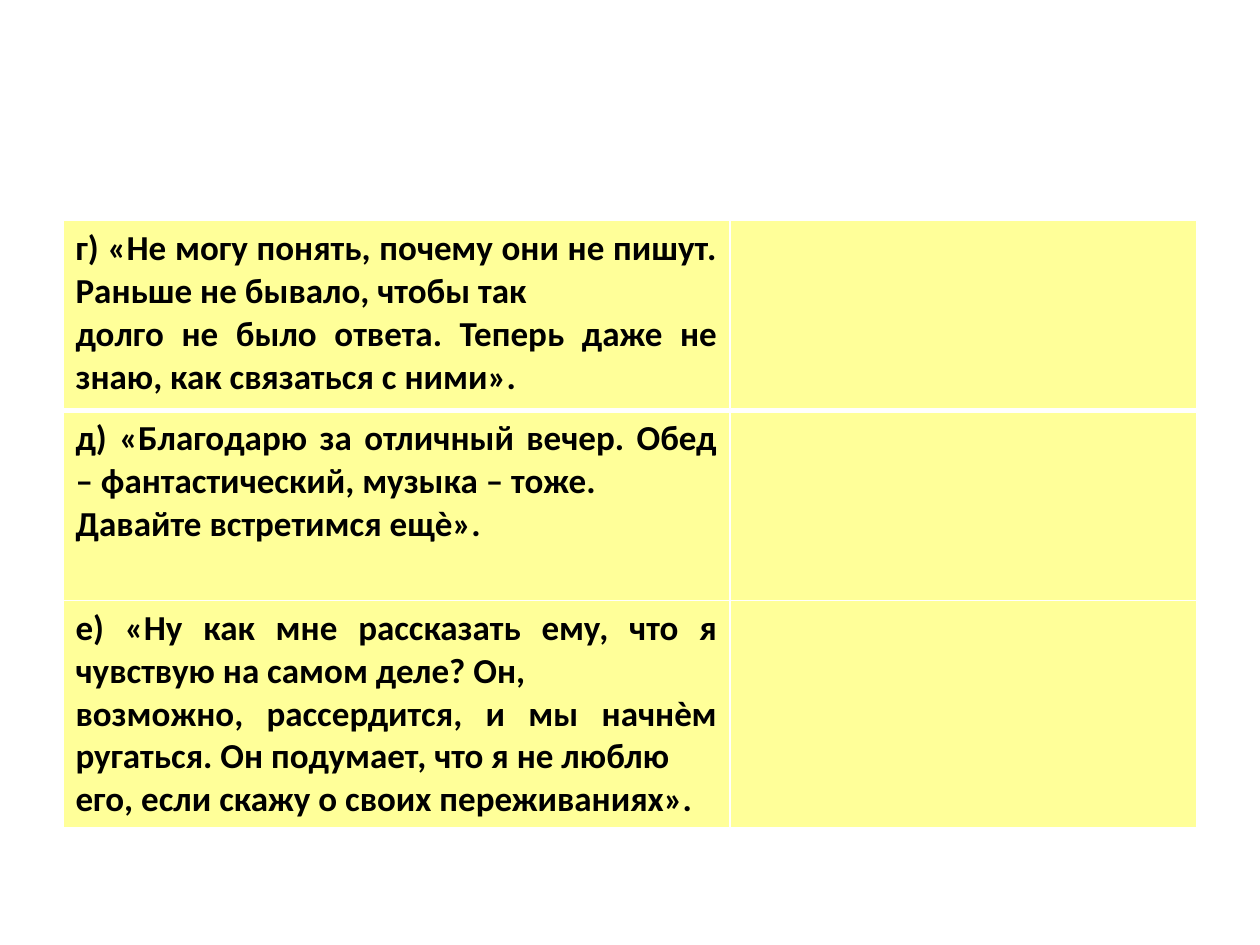
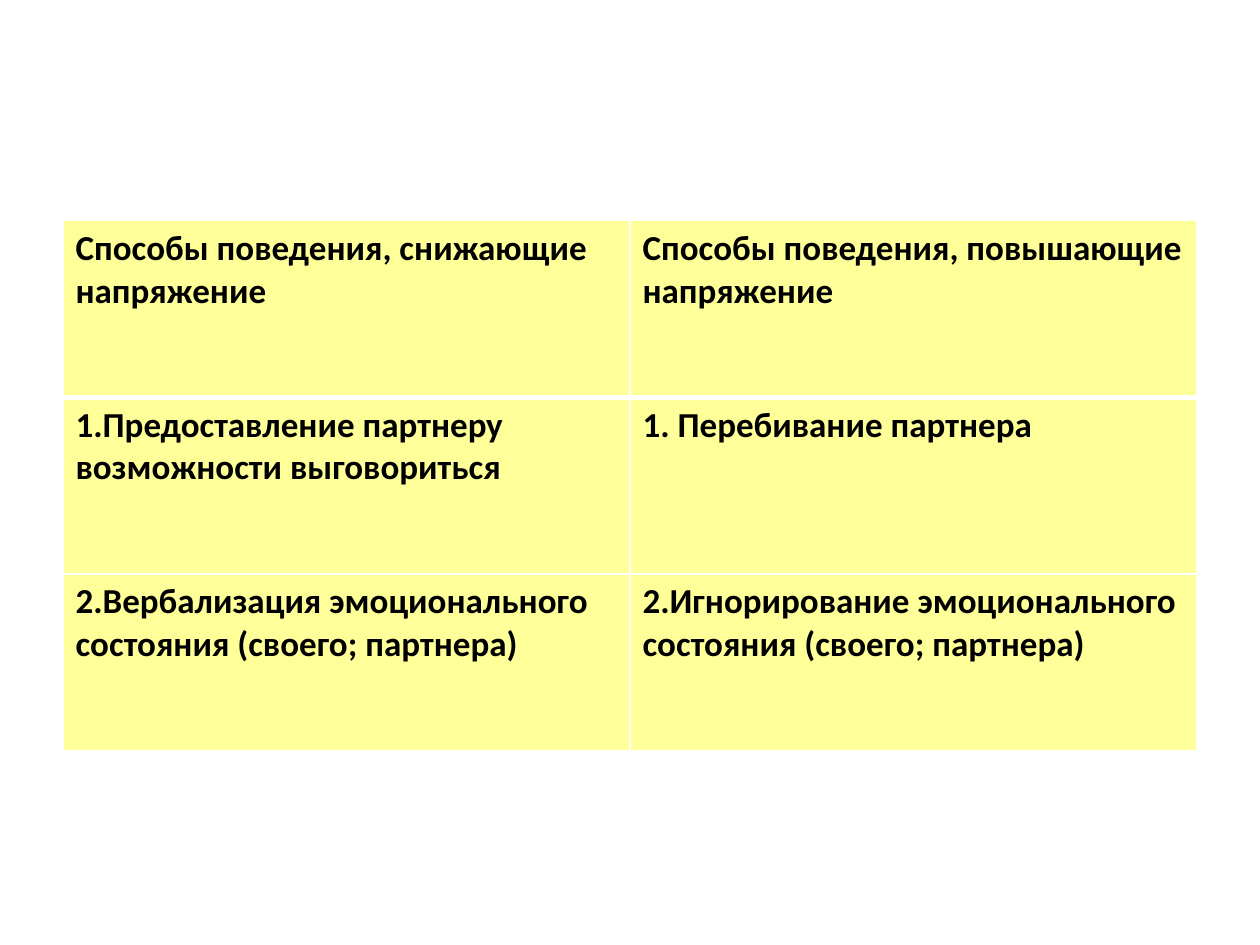
from lxml.etree import SubElement
from pptx import Presentation
from pptx.dml.color import RGBColor
from pptx.enum.text import PP_ALIGN as Align
from pptx.oxml.ns import qn
from pptx.util import Cm, Pt

YELLOW, WHITE, BLACK = "FFFF99", "FFFFFF", "000000"
FONT = {"name": "Calibri", "size": Pt(20), "bold": True}
LEFT, TOP, WIDTH = 1.27, 4.45, 22.86
THIN, THICK = 1, 3

SITUATIONS = [
    [["г) «Не могу понять, почему они не пишут. Раньше не бывало, чтобы так",
      "долго не было ответа. Теперь даже не знаю, как связаться с ними»."], []],
    [["д) «Благодарю за отличный вечер. Обед – фантастический, музыка – тоже.",
      "Давайте встретимся ещѐ»."], []],
    [["е) «Ну как мне рассказать ему, что я чувствую на самом деле? Он,",
      "возможно, рассердится, и мы начнѐм ругаться. Он подумает, что я не люблю",
      "его, если скажу о своих переживаниях»."], []],
]
BEHAVIOURS = [
    [["Способы поведения, снижающие", "напряжение"],
     ["Способы поведения, повышающие", "напряжение"]],
    [["1.Предоставление партнеру", "возможности выговориться"],
     ["1. Перебивание партнера"]],
    [["2.Вербализация эмоционального", "состояния (своего; партнера)"],
     ["2.Игнорирование эмоционального", "состояния (своего; партнера)"]],
]


def color(value):
    return RGBColor.from_string(value)


def add_borders(cell, widths):
    """Draw white cell borders; widths maps L, R, T, B (in that order) to points."""
    properties = cell._tc.get_or_add_tcPr()
    for side, width in widths.items():
        line = SubElement(properties, qn(f"a:ln{side}"), w=str(Pt(width)))
        fill = SubElement(line, qn("a:solidFill"))
        SubElement(fill, qn("a:srgbClr"), val=WHITE)


def write_lines(cell, lines):
    frame = cell.text_frame
    for index, text in enumerate(lines):
        para = frame.add_paragraph() if index else frame.paragraphs[0]
        para.alignment = Align.JUSTIFY
        span = para.add_run()
        span.text = text
        for name, value in FONT.items():
            setattr(span.font, name, value)
        span.font.color.rgb = color(BLACK)


def add_table_page(deck, rows, left_share, row_height):
    """Add a page with a two-column table; left_share is the first column's part."""
    page = deck.slides.add_slide(deck.slide_layouts[6])
    table = page.shapes.add_table(len(rows), 2, Cm(LEFT), Cm(TOP), Cm(WIDTH),
                                  Cm(row_height * len(rows))).table
    table.horz_banding = False
    for column, share in zip(table.columns, (left_share, 1 - left_share)):
        column.width = Cm(WIDTH * share)
    for row_index, row in enumerate(rows):
        table.rows[row_index].height = Cm(row_height)
        above = THICK if row_index == 1 else THIN
        below = THICK if row_index == 0 else THIN
        for column_index, lines in enumerate(row):
            cell = table.cell(row_index, column_index)
            add_borders(cell, {"L": THIN, "R": THIN, "T": above, "B": below})
            cell.fill.solid()
            cell.fill.fore_color.rgb = color(YELLOW)
            write_lines(cell, lines)


def main():
    deck = Presentation()
    deck.slide_width, deck.slide_height = Cm(25.4), Cm(19.05)
    add_table_page(deck, SITUATIONS, left_share=0.588, row_height=3.83)
    add_table_page(deck, BEHAVIOURS, left_share=0.5, row_height=3.56)
    deck.save("out.pptx")


if __name__ == "__main__":
    main()
